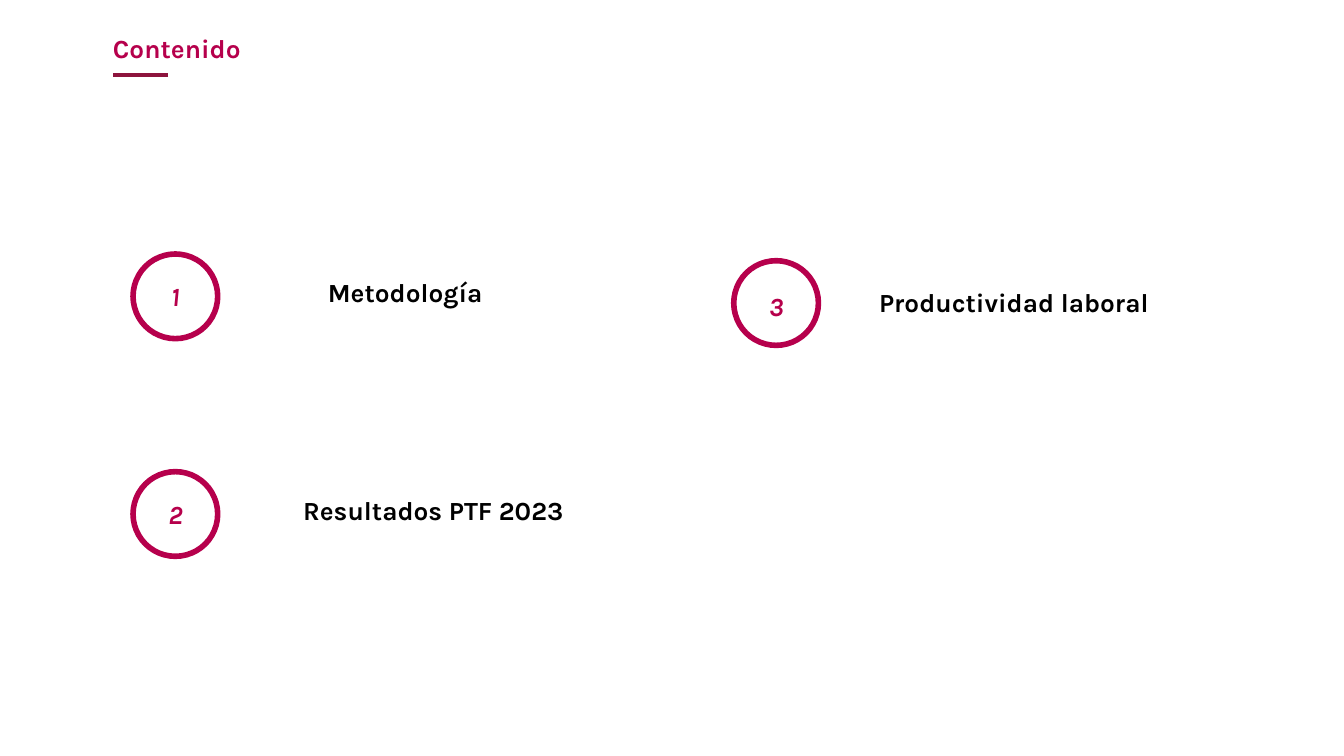
from pptx import Presentation
from pptx.dml.color import RGBColor
from pptx.enum import shapes, text
from pptx import util as u
from lxml import etree

CRIMSON = RGBColor(0xB6, 0x00, 0x4C)
NUMBER_RED = RGBColor(0xB6, 0x00, 0x4B)
WINE = RGBColor(0x8D, 0x14, 0x3D)
BLACK = RGBColor(0x00, 0x00, 0x00)
FONT = "Karla"
DRAWING_NS = "http://schemas.openxmlformats.org/drawingml/2006/main"

# Grid in inches, on a 16:9 page
WIDTH = 10
HEIGHT = WIDTH * 9 / 16
MARGIN = 0.84
COLUMNS = (0.99, 5.46)
ROWS = (1.89, 3.51)
RING = 0.63
NUMBER_WIDTH, LINE_HEIGHT = 0.43, 0.34

# Number, label, column, row, ring shift, text drop, label left, label width
ENTRIES = (
    ("1", "Metodología", 0, 0, 0, 0.15, 1.82, 2.39),
    ("2", "Resultados PTF 2023", 0, 1, 0, 0.15, 1.81, 2.83),
    ("3", "Productividad laboral", 1, 0, 0.05, 0.17, 6.13, 2.83),
)


def inches(*lengths):
    return [u.Inches(length) for length in lengths]


def add_text(page, words, area, color, centered=True, italic=False):
    box = page.shapes.add_textbox(*inches(*area))
    frame = box.text_frame
    frame.word_wrap = True
    frame.auto_size = text.MSO_AUTO_SIZE.SHAPE_TO_FIT_TEXT
    frame.text = words
    para = frame.paragraphs[0]
    para.alignment = text.PP_ALIGN.CENTER if centered else text.PP_ALIGN.LEFT
    font = para.runs[0].font
    font.name, font.size, font.bold = FONT, u.Pt(14), True
    font.italic = italic
    font.color.rgb = color
    return frame


def add_ring(page, left, top):
    ring = page.shapes.add_shape(
        shapes.MSO_SHAPE.OVAL, *inches(left, top, RING, RING))
    ring.shadow.inherit = False
    ring.fill.background()
    ring.line.color.rgb = CRIMSON
    ring.line.width = u.Pt(3)


def add_title(page, words):
    frame = add_text(page, words, (MARGIN, 0.24, 1.39, 0.24), CRIMSON, False)
    frame.margin_left = frame.margin_right = 0
    frame.margin_top = frame.margin_bottom = 0
    # Short rule under the title
    rule = page.shapes.add_connector(
        shapes.MSO_CONNECTOR.STRAIGHT, *inches(MARGIN + 0.41, 0.56, MARGIN, 0.56))
    rule.line.color.rgb = WINE
    rule.line.width = u.Pt(2)
    etree.SubElement(rule._element.spPr, f"{{{DRAWING_NS}}}effectLst")


def add_entry(page, number, label, column, row, shift, drop, label_left, label_width):
    left, top = COLUMNS[column], ROWS[row] + shift
    add_ring(page, left, top)
    number_left = left + (RING - NUMBER_WIDTH) / 2
    add_text(page, number, (number_left, top + drop, NUMBER_WIDTH, LINE_HEIGHT),
             NUMBER_RED, italic=True)
    # Labels sit slightly above the number
    add_text(page, label, (label_left, top + drop - 0.03, label_width, LINE_HEIGHT),
             BLACK)


def main():
    deck = Presentation()
    deck.slide_width, deck.slide_height = inches(WIDTH, HEIGHT)
    page = deck.slides.add_slide(deck.slide_layouts[6])
    add_title(page, "Contenido")
    for entry in ENTRIES:
        add_entry(page, *entry)
    deck.save("out.pptx")


if __name__ == "__main__":
    main()
